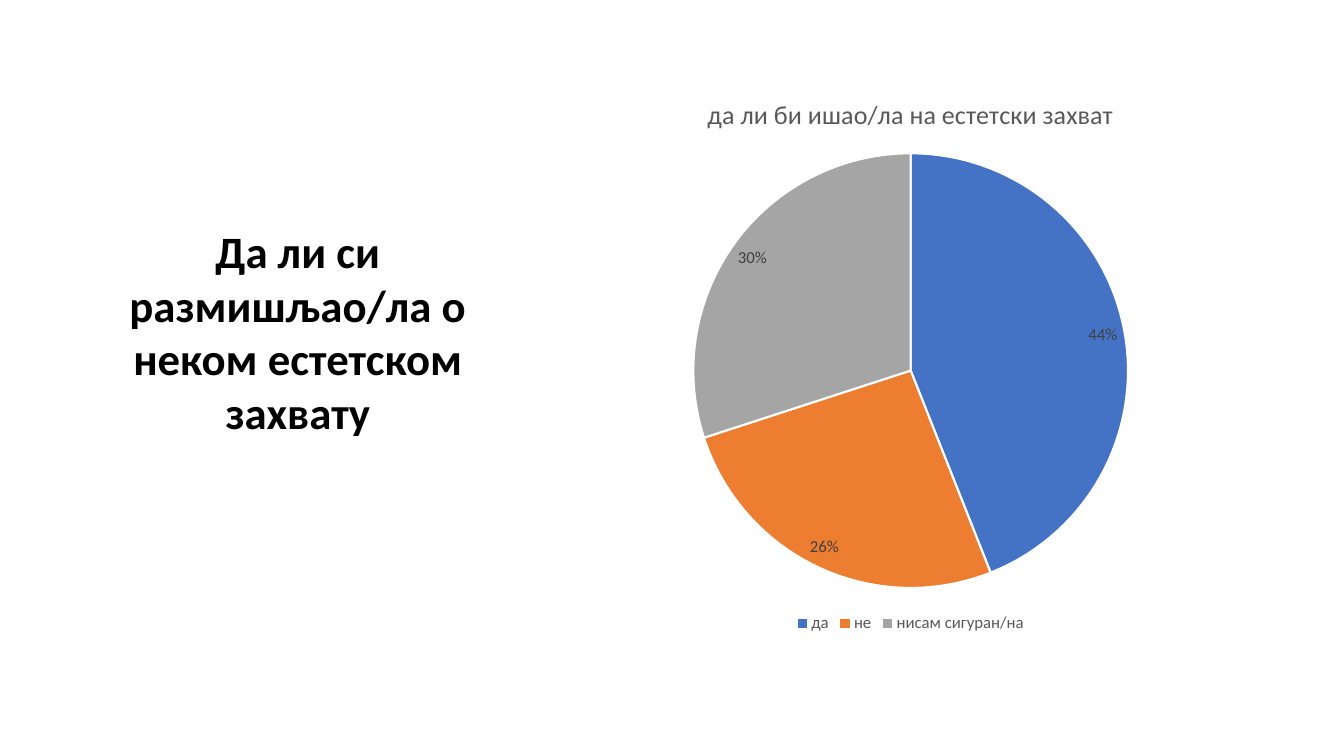
from dataclasses import dataclass

from pptx import Presentation
from pptx.chart.data import CategoryChartData
from pptx.dml.color import RGBColor
from pptx.enum.chart import XL_CHART_TYPE, XL_LABEL_POSITION, XL_LEGEND_POSITION
from pptx.enum.text import MSO_AUTO_SIZE, PP_ALIGN
from pptx.util import Pt

PIE = XL_CHART_TYPE.PIE
BEST_FIT = XL_LABEL_POSITION.BEST_FIT
BOTTOM = XL_LEGEND_POSITION.BOTTOM
GROW = MSO_AUTO_SIZE.SHAPE_TO_FIT_TEXT
CENTER = PP_ALIGN.CENTER

FONT = "Calibri"
COLORS = {
    "black": "000000",
    "white": "FFFFFF",
    "label": "404040",
    "muted": "595959",
    "blue": "4472C4",
    "orange": "ED7D31",
    "gray": "A5A5A5",
}
QUESTION = "Да ли си размишљао/ла о неком естетском захвату"
CHART_TITLE = "да ли би ишао/ла на естетски захват"


@dataclass
class Answer:
    name: str
    share: float
    color: str


ANSWERS = [
    Answer("да", 0.44, "blue"),
    Answer("не", 0.26, "orange"),
    Answer("нисам сигуран/на", 0.3, "gray"),
]


def rgb(name: str) -> RGBColor:
    return RGBColor.from_string(COLORS[name])


def style_font(font, size: float, color: str, bold: bool = False) -> None:
    font.name = FONT
    font.size = Pt(size)
    font.bold = bold
    font.color.rgb = rgb(color)


def add_pie(s, answers: list[Answer]) -> None:
    data = CategoryChartData(number_format="0%")
    data.categories = [a.name for a in answers]
    data.add_series(CHART_TITLE, [a.share for a in answers])
    chart = s.shapes.add_chart(PIE, Pt(352.8), Pt(53.3), Pt(595.4), Pt(401.8), data).chart
    style_font(chart.font, 10, "black")

    chart.has_title = True
    tf = chart.chart_title.text_frame
    tf.text = CHART_TITLE
    style_font(tf.paragraphs[0].runs[0].font, 18.6, "muted")
    chart.chart_title.include_in_layout = False

    chart.has_legend = True
    chart.legend.position = BOTTOM
    chart.legend.include_in_layout = False
    style_font(chart.legend.font, 12, "muted")

    plot = chart.plots[0]
    plot.vary_by_categories = True
    series = plot.series[0]
    for i, answer in enumerate(answers):
        fmt = series.points[i].format
        fmt.fill.solid()
        fmt.fill.fore_color.rgb = rgb(answer.color)
        fmt.line.color.rgb = rgb("white")
        fmt.line.width = Pt(1.5)

    labels = series.data_labels
    labels.show_value = True
    labels.number_format = "0%"
    labels.number_format_is_linked = False
    labels.position = BEST_FIT
    style_font(labels.font, 12, "label")


def add_question(s, text: str) -> None:
    tf = s.shapes.add_textbox(Pt(61.9), Pt(156.2), Pt(301.7), Pt(162.7)).text_frame
    tf.word_wrap = True
    tf.auto_size = GROW
    tf.text = text
    p = tf.paragraphs[0]
    p.alignment = CENTER
    style_font(p.runs[0].font, 32, "black", bold=True)


def main() -> None:
    prs = Presentation()
    prs.slide_width, prs.slide_height = Pt(960), Pt(540)
    s = prs.slides.add_slide(prs.slide_layouts[6])
    add_pie(s, ANSWERS)
    add_question(s, QUESTION)
    prs.save("out.pptx")


if __name__ == "__main__":
    main()
